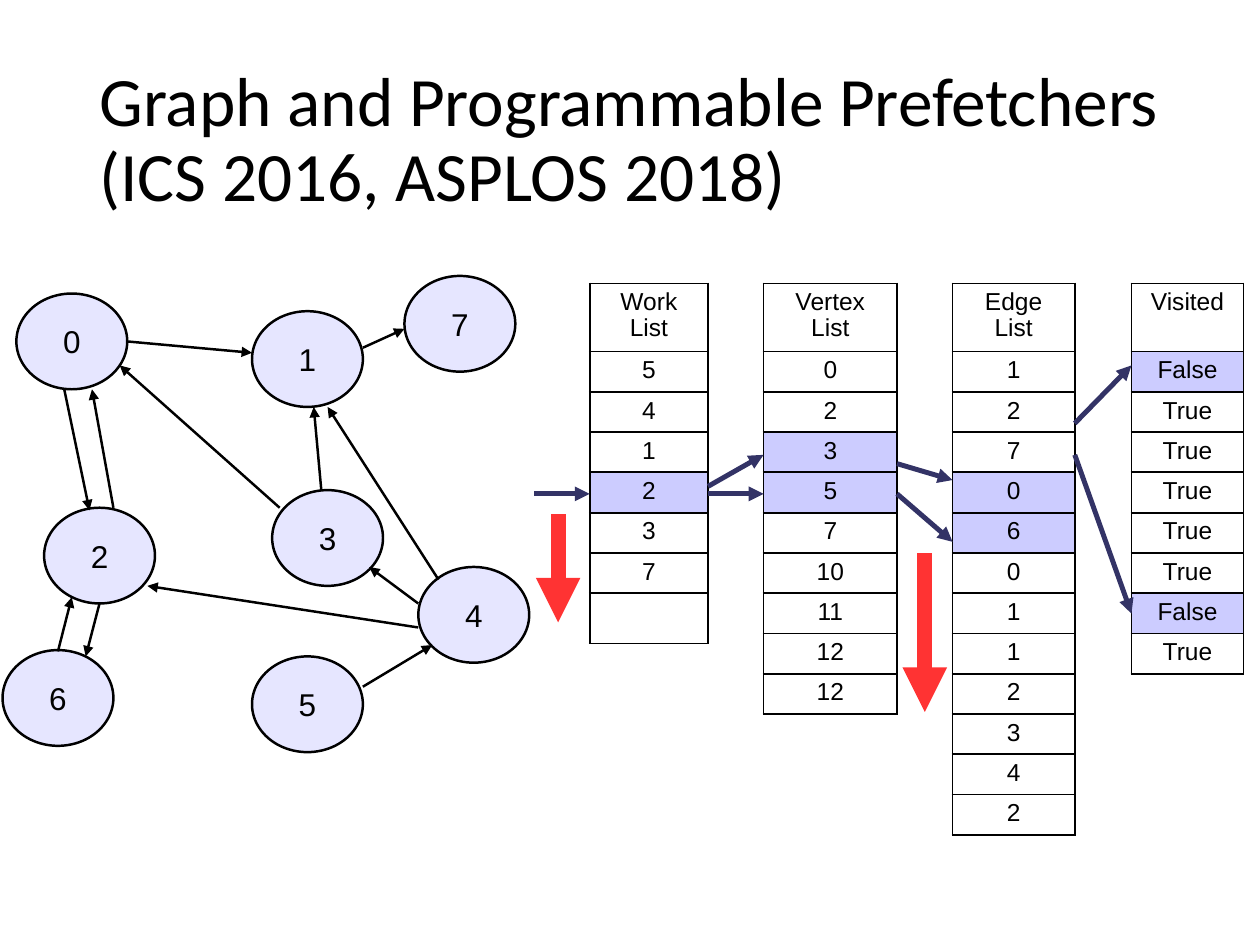
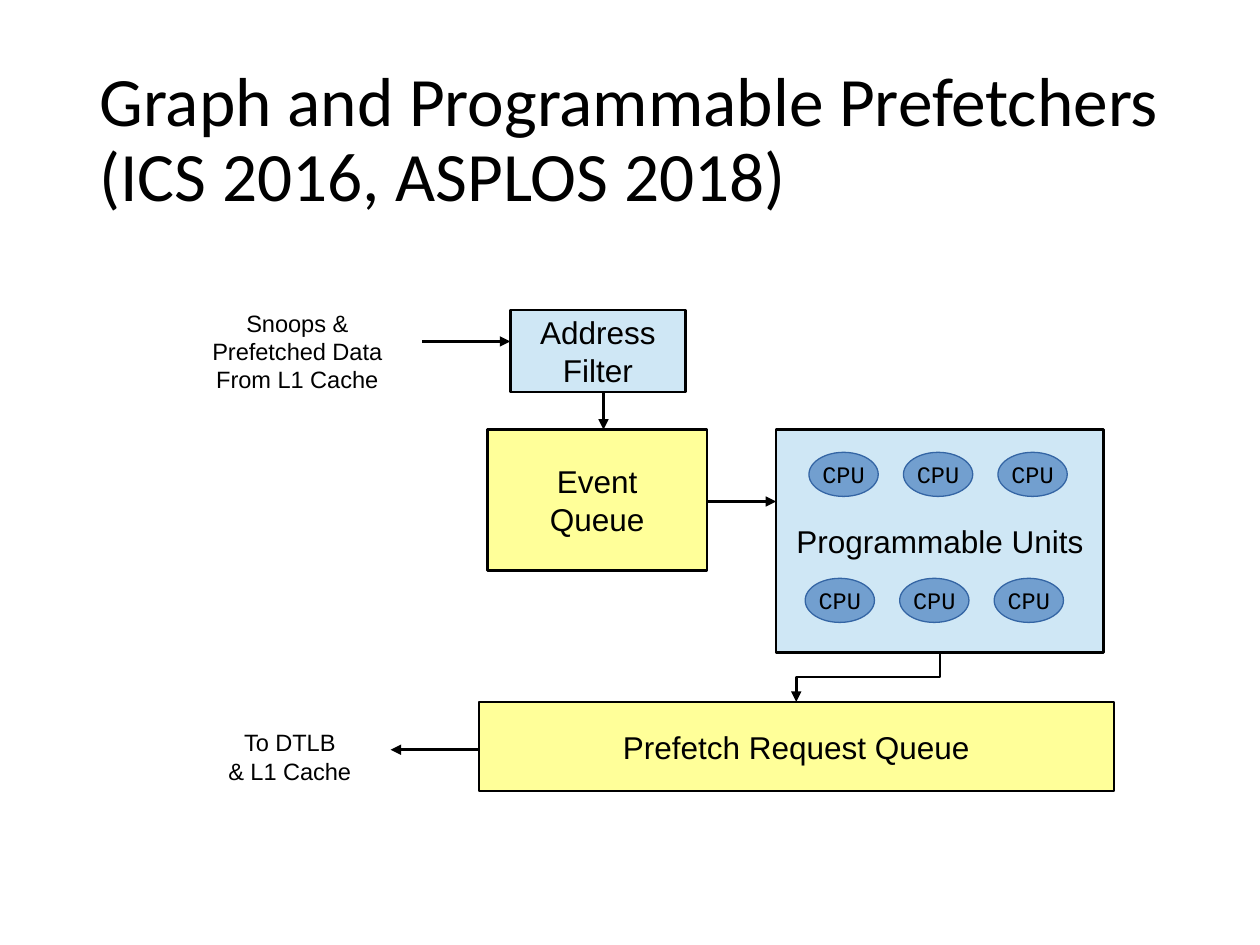
from dataclasses import dataclass

from lxml import etree
from pptx import Presentation
from pptx.dml.color import RGBColor
from pptx.enum.shapes import MSO_CONNECTOR, MSO_SHAPE
from pptx.enum.text import MSO_ANCHOR, MSO_AUTO_SIZE, PP_ALIGN
from pptx.oxml.ns import qn
from pptx.util import Inches, Pt

RECT, OVAL = MSO_SHAPE.RECTANGLE, MSO_SHAPE.OVAL
STRAIGHT, ELBOW = MSO_CONNECTOR.STRAIGHT, MSO_CONNECTOR.ELBOW
LEFT, CENTER = PP_ALIGN.LEFT, PP_ALIGN.CENTER
MIDDLE = MSO_ANCHOR.MIDDLE
NO_FIT = MSO_AUTO_SIZE.NONE
TITLE_ONLY = 5
TITLE = "Graph and Programmable Prefetchers (ICS 2016, ASPLOS 2018)"


@dataclass(frozen=True)
class Theme:
    ink: str = "000000"
    paper: str = "FFFFFF"
    node: str = "E6E6FF"
    mark: str = "CCCCFF"
    lookup: str = "333366"
    scan: str = "FF3333"
    unit: str = "CFE7F5"
    queue: str = "FFFF99"
    cpu: str = "729FCF"
    cpu_line: str = "3465A4"
    title_font: str = "Calibri"
    body_font: str = "Arial"
    code_font: str = "Courier New"
    title_size: float = 39.6
    shape_size: float = 18
    cell_size: float = 14
    label_size: float = 13.5
    thin: float = 0.75
    border: float = 1.13
    line: float = 1.42
    lookup_line: float = 2.83
    scan_line: float = 8.5


class Deck:
    def __init__(self, theme):
        self.theme = theme
        self.prs = Presentation()
        self.prs.slide_width, self.prs.slide_height = Inches(10), Inches(7.5)
        self.slide = None

    def new_slide(self, title):
        self.slide = self.prs.slides.add_slide(self.prs.slide_layouts[TITLE_ONLY])
        sp = self.slide.shapes.title
        sp.left, sp.top, sp.width, sp.height = map(Inches, (0.69, 0.4, 8.62, 1.45))
        tf = sp.text_frame
        tf.auto_size, tf.vertical_anchor = NO_FIT, MIDDLE
        self.set_text(tf, title, self.theme.title_size, self.theme.title_font, LEFT, 0.9)

    def set_text(self, tf, text, size, font=None, align=CENTER, spacing=None):
        for i, line in enumerate(text.split("\n")):
            p = tf.add_paragraph() if i else tf.paragraphs[0]
            p.text, p.alignment = line, align
            p.font.size, p.font.name = Pt(size), font or self.theme.body_font
            p.font.color.rgb = RGBColor.from_string(self.theme.ink)
            if spacing:
                p.line_spacing = spacing

    def shape(self, kind, box, text, fill, line=None, width=None, size=None, font=None):
        t = self.theme
        sp = self.slide.shapes.add_shape(kind, *map(Inches, box))
        sp.shadow.inherit = False
        sp.fill.solid()
        sp.fill.fore_color.rgb = RGBColor.from_string(fill)
        sp.line.color.rgb = RGBColor.from_string(line or t.ink)
        sp.line.width = Pt(width or t.line)
        tf = sp.text_frame
        tf.word_wrap, tf.vertical_anchor = False, MIDDLE
        tf.margin_left = tf.margin_right = Inches(0.06)
        tf.margin_top = tf.margin_bottom = Inches(0.06)
        self.set_text(tf, text, size or t.shape_size, font)

    def label(self, box, text):
        tf = self.slide.shapes.add_textbox(*map(Inches, box)).text_frame
        tf.word_wrap = True
        self.set_text(tf, text, self.theme.label_size)

    def arrow(self, x1, y1, x2, y2, color=None, width=None, kind=STRAIGHT):
        t = self.theme
        cxn = self.slide.shapes.add_connector(kind, *map(Inches, (x1, y1, x2, y2)))
        cxn.line.color.rgb = RGBColor.from_string(color or t.ink)
        cxn.line.width = Pt(width or t.line)
        sp_pr = cxn._element.spPr
        etree.SubElement(sp_pr.find(qn("a:ln")), qn("a:tailEnd"), type="triangle")
        etree.SubElement(sp_pr, qn("a:effectLst"))
        return cxn

    def drop_elbow(self, x1, y1, x2, y2):
        cx, cy = (x1 + x2) / 2, (y1 + y2) / 2
        dx, dy = (y2 - y1) / 2, (x1 - x2) / 2
        cxn = self.arrow(cx - dx, cy - dy, cx + dx, cy + dy, kind=ELBOW)
        cxn._element.spPr.find(qn("a:xfrm")).set("rot", "5400000")

    def column(self, left, width, header, values, marked=(), last_height=0.32):
        t = self.theme
        texts = [header, *values]
        heights = [0.54] + [0.32] * (len(values) - 1) + [last_height]
        frame = self.slide.shapes.add_table(
            len(texts), 1, *map(Inches, (left, 2.25, width, sum(heights))))
        table = frame.table
        table.first_row = table.horz_banding = False
        for i, (text, height) in enumerate(zip(texts, heights)):
            table.rows[i].height = Inches(height)
            cell = table.cell(i, 0)
            cell.fill.solid()
            cell.fill.fore_color.rgb = RGBColor.from_string(t.mark if i in marked else t.paper)
            self.set_text(cell.text_frame, text, t.cell_size, spacing=0.95)
            self.outline(cell)

    def outline(self, cell):
        tc_pr = cell._tc.get_or_add_tcPr()
        for i, side in enumerate(("a:lnL", "a:lnR", "a:lnT", "a:lnB")):
            ln = etree.Element(qn(side), w=str(int(Pt(self.theme.border))))
            fill = etree.SubElement(ln, qn("a:solidFill"))
            etree.SubElement(fill, qn("a:srgbClr"), val=self.theme.ink)
            tc_pr.insert(i, ln)


def build_graph_slide(deck):
    t = deck.theme
    deck.new_slide(TITLE)
    nodes = [(0.13, 2.33), (2, 2.47), (0.35, 4.03), (2.16, 3.89),
             (3.32, 4.5), (2, 5.21), (0.02, 5.16), (3.21, 2.19)]
    for number, (x, y) in enumerate(nodes):
        deck.shape(OVAL, (x, y, 0.88, 0.76), str(number), t.node)

    edges = [(1.01, 2.71, 2, 2.8), (0.51, 3.09, 0.71, 4.05), (0.9, 4.03, 0.73, 3.09),
             (2.55, 3.89, 2.49, 3.23), (2.22, 4.03, 0.95, 2.9), (3.48, 4.6, 2.6, 3.23),
             (3.32, 4.79, 2.93, 4.5), (3.32, 4.98, 1.17, 4.65), (2.88, 5.45, 3.43, 5.12),
             (0.46, 5.17, 0.57, 4.74), (2.88, 2.76, 3.21, 2.61), (0.79, 4.79, 0.68, 5.21)]
    for edge in edges:
        deck.arrow(*edge)

    deck.column(4.68, 0.94, "Work List", [*"541237", ""], {4}, 0.4)
    deck.column(6.06, 1.06, "Vertex List", "0 2 3 5 7 10 11 12 12".split(), {3, 4})
    deck.column(7.56, 0.97, "Edge List", "127060112342", {4, 5})
    visited = ["False" if vertex in (0, 6) else "True" for vertex in range(8)]
    deck.column(8.98, 0.89, "Visited", visited, {1, 7})

    lookups = [(4.24, 3.92, 4.68, 3.92), (5.62, 3.86, 6.06, 3.61), (5.62, 3.92, 6.06, 3.92),
               (7.12, 3.68, 7.56, 3.81), (7.12, 3.92, 7.56, 4.3),
               (8.53, 3.36, 8.98, 2.9), (8.53, 3.61, 8.98, 4.87)]
    for lookup in lookups:
        deck.arrow(*lookup, t.lookup, t.lookup_line)
    for x, top, bottom in ((4.43, 4.08, 4.94), (7.34, 4.39, 5.65)):
        deck.arrow(x, top, x, bottom, t.scan, t.scan_line)


def build_prefetcher_slide(deck):
    t = deck.theme
    deck.new_slide(TITLE)
    blocks = [((4.05, 2.46, 1.39, 0.65), "Address\nFilter", t.unit),
              ((3.87, 3.41, 1.74, 1.12), "Event\nQueue", t.queue),
              ((6.16, 3.41, 2.6, 1.77), "Programmable Units", t.unit),
              ((3.8, 5.57, 5.04, 0.71), "Prefetch Request Queue", t.queue)]
    for block in blocks:
        deck.shape(RECT, *block)

    for left, top in ((6.42, 3.59), (6.39, 4.59)):
        for i in range(3):
            deck.shape(OVAL, (left + 0.75 * i, top, 0.55, 0.35), "CPU", t.cpu,
                       t.cpu_line, t.thin, t.label_size, t.code_font)

    deck.label((1.36, 2.4, 2, 0.72), "Snoops &\nPrefetched Data\nFrom L1 Cache")
    deck.label((1.55, 5.73, 1.5, 0.52), "To DTLB\n& L1 Cache")
    for flow in ((3.35, 2.71, 4.05, 2.71), (4.79, 3.11, 4.79, 3.41),
                 (5.61, 3.98, 6.16, 3.98), (3.8, 5.95, 3.1, 5.95)):
        deck.arrow(*flow)
    deck.drop_elbow(7.46, 5.18, 6.32, 5.57)


def main():
    deck = Deck(Theme())
    build_graph_slide(deck)
    build_prefetcher_slide(deck)
    deck.prs.save("out.pptx")


if __name__ == "__main__":
    main()
